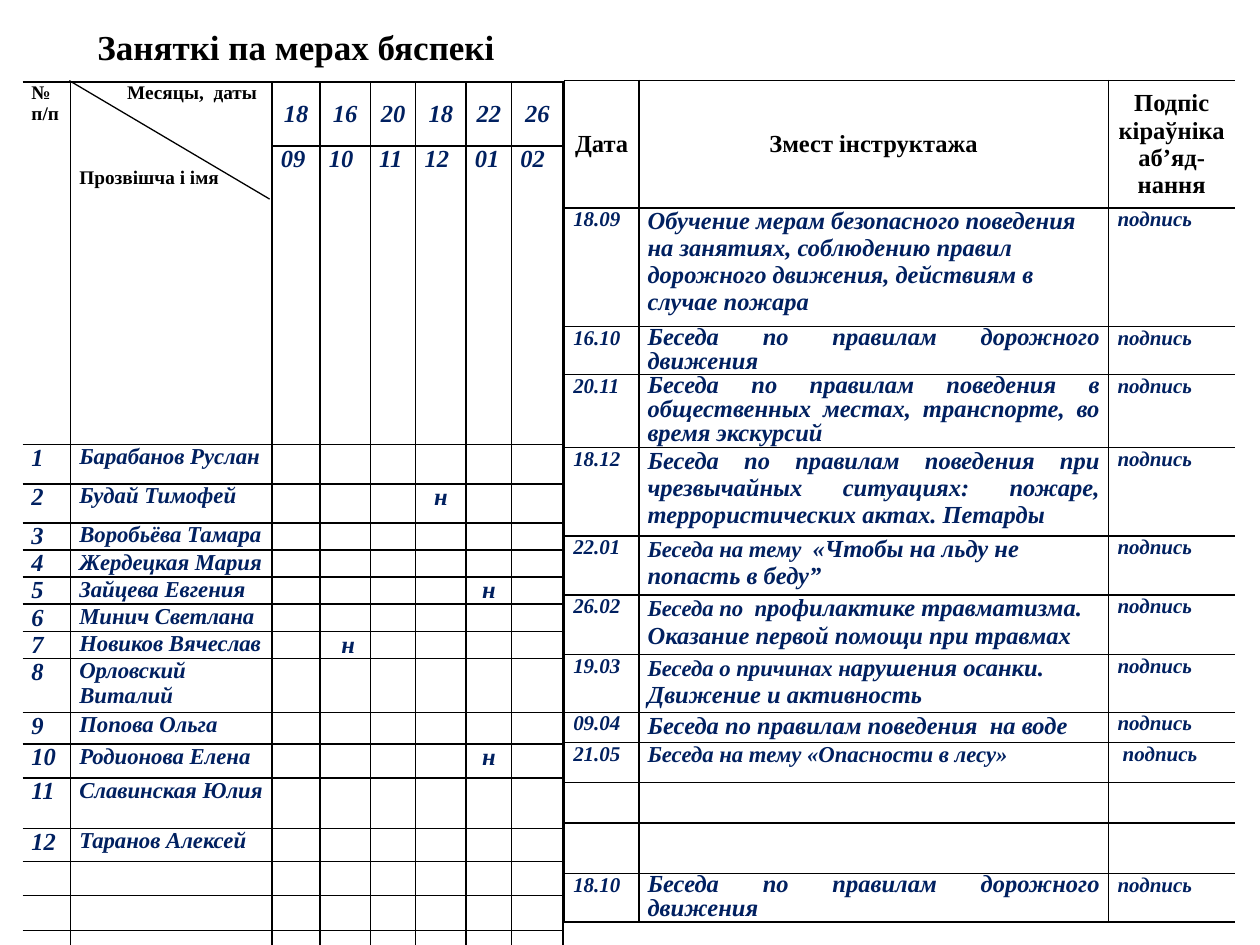
from dataclasses import dataclass

from lxml.etree import SubElement
from pptx import Presentation
from pptx.dml.color import RGBColor
from pptx.enum.shapes import MSO_CONNECTOR
from pptx.enum.text import MSO_ANCHOR, MSO_AUTO_SIZE, PP_ALIGN
from pptx.oxml.ns import qn
from pptx.util import Inches, Pt

BLACK = RGBColor(0x00, 0x00, 0x00)
NAVY = RGBColor(0x00, 0x20, 0x60)
FONT = "Times New Roman"
JUSTIFY, CENTER, LEFT = PP_ALIGN.JUSTIFY, PP_ALIGN.CENTER, PP_ALIGN.LEFT


@dataclass(frozen=True)
class Pupil:
    name: str
    height: float
    absent_column: int = 0
    mark: str = "н"


@dataclass(frozen=True)
class Briefing:
    date: str
    topic: str
    height: float
    lead: str = ""
    size: float = 14
    align: PP_ALIGN = LEFT
    spacing: float = 0
    signature: str = "подпись"


PUPILS = [
    Pupil("Барабанов Руслан", 0.31),
    Pupil("Будай Тимофей", 0.31, 5),
    Pupil("Воробьёва Тамара", 0.21),
    Pupil("Жердецкая Мария", 0.21),
    Pupil("Зайцева Евгения", 0.21, 6),
    Pupil("Минич Светлана", 0.21),
    Pupil("Новиков Вячеслав", 0.21, 3, " н"),
    Pupil("Орловский Виталий", 0.43),
    Pupil("Попова Ольга", 0.25),
    Pupil("Родионова Елена", 0.27, 6),
    Pupil("Славинская Юлия", 0.4),
    Pupil("Таранов Алексей", 0.26),
]
SPARE_ROWS = [0.27, 0.28, 0.32]
MEETINGS = [("18", "09"), ("16", "10"), ("20", "11"), ("18", "12"), ("22", "01"), ("26", "02")]
ROAD_RULES = "Беседа по правилам дорожного движения"
BRIEFINGS = [
    Briefing("18.09", "Обучение мерам безопасного поведения на занятиях, соблюдению правил "
             "дорожного движения, действиям в случае пожара", 0.94),
    Briefing("16.10", ROAD_RULES, 0.38, align=JUSTIFY, spacing=13.8),
    Briefing("20.11", "Беседа по правилам поведения в общественных местах, транспорте, во "
             "время экскурсий", 0.58, align=JUSTIFY, spacing=13.8),
    Briefing("18.12", "Беседа по правилам поведения при чрезвычайных ситуациях: пожаре, "
             "террористических актах. Петарды", 0.7, align=JUSTIFY),
    Briefing("22.01", "«Чтобы на льду не попасть в беду”", 0.47, lead="Беседа на тему  "),
    Briefing("26.02", "рофилактике травматизма. Оказание первой помощи при травмах", 0.47,
             lead="Беседа по  п"),
    Briefing("19.03", "арушения осанки. Движение и активность", 0.46,
             lead="Беседа о причинах н"),
    Briefing("09.04", "Беседа по правилам поведения  на воде", 0.24),
    Briefing("21.05", "Беседа на тему «Опасности в лесу»", 0.32, size=13, signature=" подпись"),
    Briefing("", "", 0.32, signature=""),
    Briefing("", "", 0.4, signature=""),
    Briefing("18.10", ROAD_RULES, 0.38, align=JUSTIFY, spacing=13.8),
]


def write(paragraph, text: str, *, size: float, color: RGBColor = NAVY, italic: bool = True,
          align: PP_ALIGN = LEFT, spacing: float = 0, before: float = 0) -> None:
    paragraph.alignment = align
    if spacing:
        paragraph.line_spacing = Pt(spacing)
    if before:
        paragraph.space_before = Pt(before)
    if text:
        run = paragraph.add_run()
        run.text = text
        run.font.name, run.font.size = FONT, Pt(size)
        run.font.bold, run.font.italic = True, italic
        run.font.color.rgb = color


def fill_cell(cell, text: str, *, anchor: MSO_ANCHOR = MSO_ANCHOR.TOP, **style) -> None:
    cell.vertical_anchor = anchor
    write(cell.text_frame.paragraphs[0], text, **style)


def border_cell(cell, open_side: str) -> None:
    properties = cell._tc.get_or_add_tcPr()
    for side in ("lnL", "lnR", "lnT", "lnB"):
        line = SubElement(properties, qn(f"a:{side}"), w=str(Pt(1)))
        if side == open_side:
            SubElement(line, qn("a:noFill"))
        else:
            SubElement(SubElement(line, qn("a:solidFill")), qn("a:srgbClr"), val=str(BLACK))


def add_grid(slide, left: float, top: float, widths: list[float], heights: list[float],
             open_column: int, open_side: str):
    table = slide.shapes.add_table(len(heights), len(widths), Inches(left), Inches(top),
                                   Inches(sum(widths)), Inches(sum(heights))).table
    table.first_row = table.horz_banding = False
    for column, width in zip(table.columns, widths):
        column.width = Inches(width)
    for row, height in zip(table.rows, heights):
        row.height = Inches(height)
        for index, cell in enumerate(row.cells):
            cell.margin_left = cell.margin_right = Inches(0.07)
            cell.margin_top = cell.margin_bottom = 0
            border_cell(cell, open_side if index == open_column else "")
            cell.fill.background()
            SubElement(cell.text_frame.paragraphs[0]._p, qn("a:endParaRPr"), sz="1200")
    return table


def add_title(slide) -> None:
    title = slide.shapes.title
    title.left, title.top, title.width, title.height = map(Inches, (-2.21, 0.15, 9.19, 0.44))
    frame = title.text_frame
    frame.auto_size, frame.vertical_anchor = MSO_AUTO_SIZE.NONE, MSO_ANCHOR.TOP
    write(frame.paragraphs[0], "Заняткі па мерах бяспекі ", size=20, color=BLACK,
          italic=False, align=CENTER)


def add_attendance(slide) -> None:
    heights = [0.51, 2.37] + [pupil.height for pupil in PUPILS] + SPARE_ROWS
    table = add_grid(slide, 0.18, 0.65, [0.38, 1.6, 0.38, 0.4, 0.36, 0.4, 0.36, 0.41],
                     heights, 0, "lnL")
    for column in (0, 1):
        table.cell(0, column).merge(table.cell(1, column))
    heading = {"size": 11, "color": BLACK, "italic": False}
    fill_cell(table.cell(0, 0), "№ п/п", **heading)
    corner = table.cell(0, 1)
    fill_cell(corner, "Месяцы,  даты", **heading)
    corner.text_frame.paragraphs[0]._p.get_or_add_pPr().set("marL", str(Inches(0.38)))
    write(corner.text_frame.add_paragraph(), "Прозвішча і імя", before=36.5, **heading)

    for column, (day, month) in enumerate(MEETINGS, start=2):
        fill_cell(table.cell(0, column), day, size=14, align=CENTER, anchor=MSO_ANCHOR.MIDDLE)
        fill_cell(table.cell(1, column), month, size=14)
    for number, pupil in enumerate(PUPILS, start=1):
        row = number + 1
        fill_cell(table.cell(row, 0), str(number), size=14)
        fill_cell(table.cell(row, 1), pupil.name, size=13)
        if pupil.absent_column:
            fill_cell(table.cell(row, pupil.absent_column), pupil.mark, size=14, align=CENTER)


def add_corner_diagonal(slide) -> None:
    diagonal = slide.shapes.add_connector(MSO_CONNECTOR.STRAIGHT, Inches(0.55), Inches(0.64),
                                          Inches(2.14), Inches(1.58))
    diagonal.line.color.rgb = BLACK
    diagonal.line.width = Pt(0.75)
    SubElement(diagonal._element.spPr, qn("a:effectLst"))


def add_briefings(slide) -> None:
    heights = [1.01] + [briefing.height for briefing in BRIEFINGS]
    table = add_grid(slide, 4.48, 0.64, [0.59, 3.73, 1], heights, 2, "lnR")
    heading = {"size": 14, "color": BLACK, "italic": False, "align": CENTER}
    for column, text in enumerate(("Дата", "Змест інструктажа", "Подпіс кіраўніка")):
        fill_cell(table.cell(0, column), text, anchor=MSO_ANCHOR.MIDDLE, **heading)
    write(table.cell(0, 2).text_frame.add_paragraph(), "аб’яд-нання", **heading)

    for row, briefing in enumerate(BRIEFINGS, start=1):
        fill_cell(table.cell(row, 0), briefing.date, size=12, align=JUSTIFY)
        layout = {"align": briefing.align, "spacing": briefing.spacing}
        fill_cell(table.cell(row, 1), briefing.lead, size=13, **layout)
        write(table.cell(row, 1).text_frame.paragraphs[0], briefing.topic,
              size=briefing.size, **layout)
        fill_cell(table.cell(row, 2), briefing.signature, size=12, align=JUSTIFY)


def main() -> None:
    presentation = Presentation()
    presentation.slide_width, presentation.slide_height = Inches(10), Inches(7.5)
    slide = presentation.slides.add_slide(presentation.slide_layouts[5])
    add_attendance(slide)
    add_corner_diagonal(slide)
    add_title(slide)
    add_briefings(slide)
    presentation.save("out.pptx")


if __name__ == "__main__":
    main()
